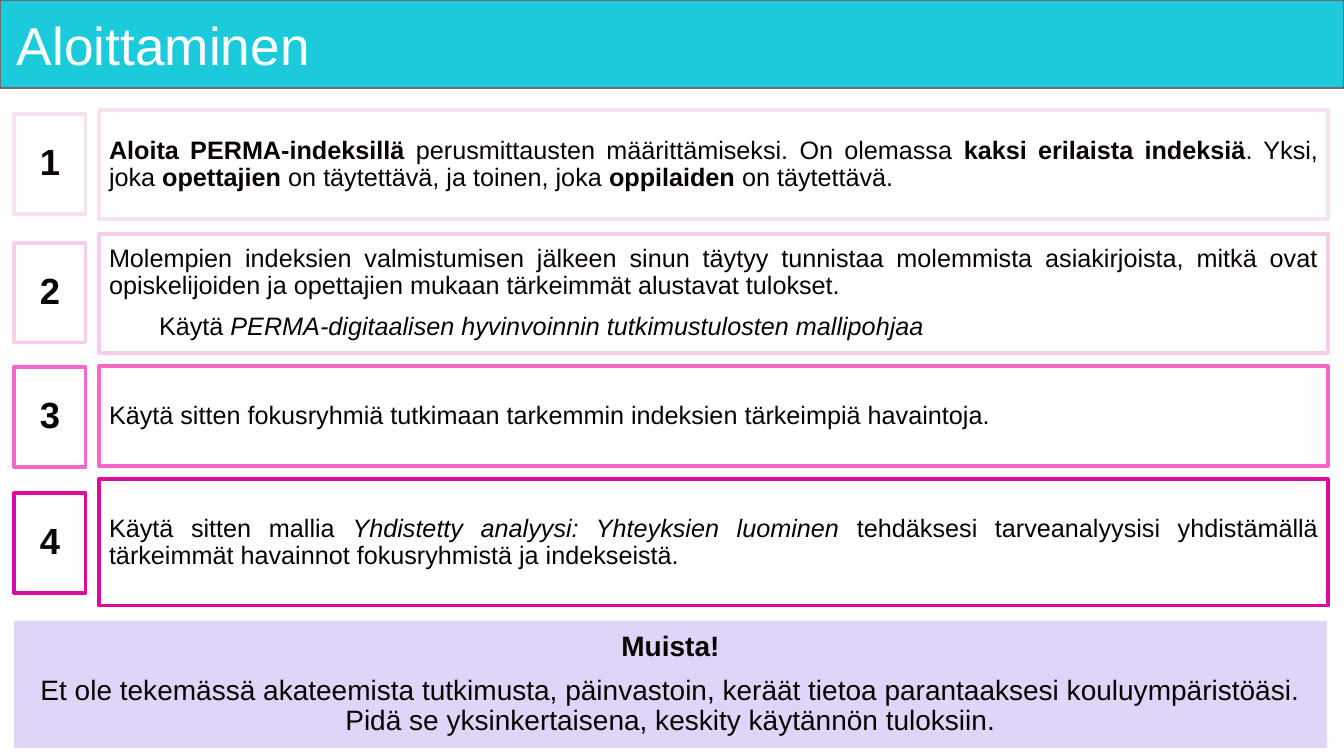
"""Build the "Aloittaminen" slide: four numbered steps and a reminder."""

import dataclasses
import typing

import pptx
import pptx.dml.color
import pptx.enum.shapes
import pptx.enum.text
import pptx.presentation
import pptx.shapes.autoshape
import pptx.slide
import pptx.util

RGBColor = pptx.dml.color.RGBColor
Align = pptx.enum.text.PP_ALIGN

EMU_PER_PX = 914400 / 100.8
FONT = "Arial"
WHITE = RGBColor(0xFF, 0xFF, 0xFF)
INK = RGBColor(0x08, 0x03, 0x01)
TURQUOISE = RGBColor(0x1B, 0xCB, 0xDC)
GREY = RGBColor(0x6C, 0x6E, 0x70)
LAVENDER = RGBColor(0xDF, 0xD5, 0xF8)
PALE_PINK = RGBColor(0xF6, 0xE2, 0xF0)
LIGHT_PINK = RGBColor(0xF6, 0xCE, 0xEA)
PINK = RGBColor(0xF7, 0x66, 0xCA)
MAGENTA = RGBColor(0xDE, 0x0A, 0x9D)

NUMBER_LEFT, NUMBER_WIDTH, NUMBER_HEIGHT = 14, 72, 100
STEP_LEFT, STEP_WIDTH = 99, 1229


@dataclasses.dataclass(frozen=True)
class Span:
    """A stretch of text with its own emphasis."""

    text: str
    bold: bool = False
    italic: bool = False


@dataclasses.dataclass(frozen=True)
class Para:
    """A paragraph made of spans."""

    spans: tuple[Span, ...]
    size: int = 18
    align: typing.Any = Align.JUSTIFY
    color: RGBColor = INK
    indent: int = 0


@dataclasses.dataclass(frozen=True)
class Step:
    """A numbered step with the tops of its two boxes."""

    number_top: int
    top: int
    height: int
    color: RGBColor
    paras: tuple[Para, ...]


STEPS = (
    Step(114, 110, 109, PALE_PINK, (
        Para((
            Span("Aloita PERMA-indeksillä", bold=True),
            Span(" perusmittausten määrittämiseksi. On olemassa "),
            Span("kaksi erilaista indeksiä", bold=True),
            Span(". Yksi, joka "),
            Span("opettajien", bold=True),
            Span(" on täytettävä, ja toinen, joka "),
            Span("oppilaiden", bold=True),
            Span(" on täytettävä."),
        )),
    )),
    Step(243, 234, 119, LIGHT_PINK, (
        Para((Span("Molempien indeksien valmistumisen jälkeen sinun täytyy tunnistaa "
                   "molemmista asiakirjoista, mitkä ovat opiskelijoiden ja opettajien "
                   "mukaan tärkeimmät alustavat tulokset."),)),
        Para((
            Span("Käytä"),
            Span(" PERMA-digitaalisen hyvinvoinnin tutkimustulosten mallipohjaa", italic=True),
        ), indent=50),
    )),
    Step(367, 366, 100, PINK, (
        Para((Span("Käytä sitten fokusryhmiä tutkimaan tarkemmin indeksien "
                   "tärkeimpiä havaintoja."),)),
    )),
    Step(493, 479, 127, MAGENTA, (
        Para((
            Span("Käytä sitten mallia "),
            Span("Yhdistetty analyysi: Yhteyksien luominen", italic=True),
            Span(" tehdäksesi tarveanalyysisi yhdistämällä tärkeimmät havainnot "
                 "fokusryhmistä ja indekseistä."),
        )),
    )),
)

REMINDER = (
    Para((Span("Muista!", bold=True),), 20, Align.CENTER),
    Para((Span("Et ole tekemässä akateemista tutkimusta, päinvastoin, keräät tietoa "
               "parantaaksesi kouluympäristöäsi. Pidä se yksinkertaisena, keskity "
               "käytännön tuloksiin."),), 20, Align.CENTER),
)


def px(length: int) -> pptx.util.Emu:
    """Turn pixels into EMU."""
    return pptx.util.Emu(round(length * EMU_PER_PX))


def write(box: pptx.shapes.autoshape.Shape, paras: tuple[Para, ...],
          inset_x: int = 10, inset_y: int = 5) -> None:
    """Fill a box with paragraphs, centred vertically."""
    frame = box.text_frame
    frame.word_wrap = True
    frame.vertical_anchor = pptx.enum.text.MSO_ANCHOR.MIDDLE
    frame.margin_left = frame.margin_right = px(inset_x)
    frame.margin_top = frame.margin_bottom = px(inset_y)
    for index, para in enumerate(paras):
        paragraph = frame.add_paragraph() if index else frame.paragraphs[0]
        paragraph.alignment = para.align
        paragraph.line_spacing = 0.9
        if index:
            paragraph.space_before = pptx.util.Pt(10)
        if para.indent:
            paragraph._p.get_or_add_pPr().set("marL", str(px(para.indent)))
        paragraph.font.name = FONT
        paragraph.font.size = pptx.util.Pt(para.size)
        paragraph.font.color.rgb = para.color
        same_bold = len({span.bold for span in para.spans}) == 1
        if same_bold:
            paragraph.font.bold = para.spans[0].bold
        for span in para.spans:
            run = paragraph.add_run()
            run.text = span.text
            if not same_bold:
                run.font.bold = span.bold
            if span.italic:
                run.font.italic = True


def add_box(page: pptx.slide.Slide, left: int, top: int, width: int, height: int,
            fill: RGBColor | None = None, line: RGBColor | None = None,
            line_width: float = 2.25) -> pptx.shapes.autoshape.Shape:
    """Draw a rectangle with an optional fill and outline."""
    box = page.shapes.add_shape(pptx.enum.shapes.MSO_SHAPE.RECTANGLE,
                                px(left), px(top), px(width), px(height))
    box.shadow.inherit = False
    if fill is None:
        box.fill.background()
    else:
        box.fill.solid()
        box.fill.fore_color.rgb = fill
    if line is None:
        box.line.fill.background()
    else:
        box.line.color.rgb = line
        box.line.width = pptx.util.Pt(line_width)
    return box


def add_step(page: pptx.slide.Slide, number: int, step: Step) -> None:
    """Draw a step's text box and its number box."""
    text_box = add_box(page, STEP_LEFT, step.top, STEP_WIDTH, step.height, line=step.color)
    write(text_box, step.paras)
    number_box = add_box(page, NUMBER_LEFT, step.number_top, NUMBER_WIDTH, NUMBER_HEIGHT,
                         line=step.color)
    write(number_box, (Para((Span(str(number), bold=True),), 26, Align.CENTER),))


def build() -> pptx.presentation.Presentation:
    """Build the deck with its single slide."""
    deck = pptx.Presentation()
    deck.slide_width, deck.slide_height = px(1344), px(756)
    page = deck.slides.add_slide(deck.slide_layouts[6])
    add_box(page, 0, 0, 1344, 88, fill=TURQUOISE, line=GREY, line_width=1)
    title = page.shapes.add_textbox(px(11), px(9), px(1316), px(79))
    write(title, (Para((Span("Aloittaminen"),), 38, Align.LEFT, WHITE),), 6, 6)
    for number, step in enumerate(STEPS, start=1):
        add_step(page, number, step)
    write(add_box(page, 14, 621, 1313, 127, fill=LAVENDER), REMINDER)
    return deck


if __name__ == "__main__":
    build().save("out.pptx")
